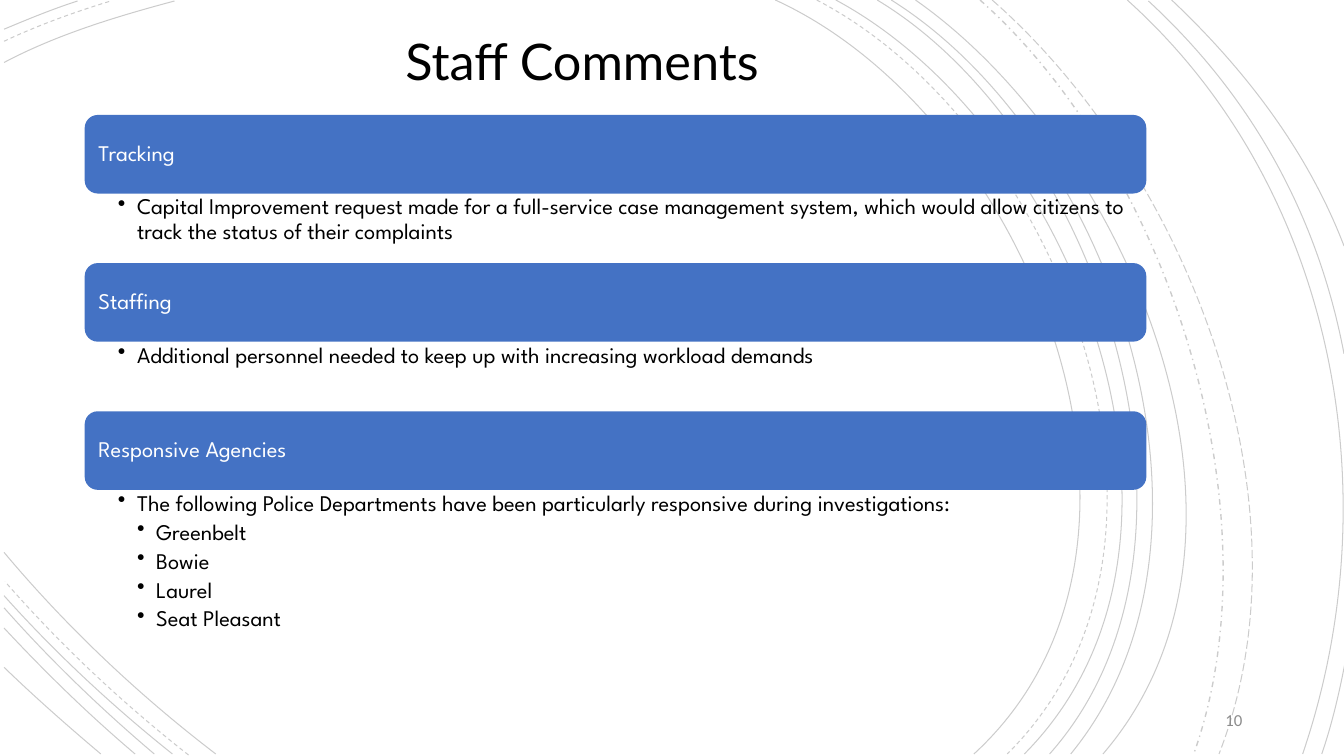
import dataclasses

import lxml.etree
import pptx
import pptx.dml.color
import pptx.enum.dml
import pptx.enum.shapes
import pptx.enum.text
import pptx.oxml.ns
import pptx.util

PX = 9144  # EMU per px, 100 px to the inch
RGB = pptx.dml.color.RGBColor.from_string
ANCHOR = pptx.enum.text.MSO_ANCHOR
ALIGN = pptx.enum.text.PP_ALIGN
DASH = pptx.enum.dml.MSO_LINE
qn = pptx.oxml.ns.qn


@dataclasses.dataclass(frozen=True)
class Theme:
    ink: str = "000000"
    paper: str = "FFFFFF"
    bar: str = "4472C4"
    muted: str = "8C8C8C"
    title_font: str = "Lato"
    body_font: str = "League Spartan"
    number_font: str = "Calibri"
    title_size: int = 36
    body_size: int = 16
    number_size: int = 12
    line_spacing: float = 0.9
    bullet_gap: float = 3.4
    arc_opacity: int = 20


THEME = Theme()

# Line style and width, then each arc: start, two control points, end
ARC_BANDS = [
    (DASH.SOLID, 0.75, [
        ((769, 0), (1020, 115), (1192, 540), (966, 748)),
        ((829, 0), (1065, 127), (1225, 537), (1016, 748)),
        ((870, 0), (1091, 133), (1225, 541), (1041, 748)),
        ((884, 0), (1104, 138), (1238, 533), (1062, 748)),
        ((908, 0), (1118, 147), (1282, 529), (1094, 748)),
        ((1118, 0), (1324, 185), (1380, 490), (1292, 748)),
        ((1139, 1), (1242, 96), (1307, 214), (1333, 351)),
        ((1334, 658), (1328, 689), (1321, 719), (1311, 748)),
        ((1162, 0), (1235, 69), (1297, 150), (1333, 244)),
        ((4, 62), (57, 34), (117, 16), (173, 1)),
        ((4, 29), (28, 19), (52, 9), (77, 1)),
        ((214, 748), (138, 690), (66, 622), (4, 548)),
        ((171, 748), (112, 701), (55, 648), (4, 591)),
        ((153, 748), (101, 704), (50, 655), (4, 603)),
        ((134, 748), (88, 709), (45, 667), (4, 623)),
        ((100, 748), (68, 721), (35, 692), (4, 662)),
    ]),
    (DASH.DASH, 0.75, [
        ((810, 0), (1050, 125), (1212, 537), (999, 748)),
        ((4, 41), (38, 25), (74, 12), (110, 1)),
        ((187, 749), (122, 698), (60, 640), (5, 577)),
    ]),
    (DASH.DASH_DOT, 1, [((972, 0), (1159, 166), (1269, 509), (1184, 748))]),
    (DASH.LONG_DASH, 0.75, [((984, 0), (1177, 169), (1306, 499), (1209, 748))]),
]

# Heading, height of the text below it, and its lines as (level, text)
COMMENTS = [
    ("Tracking", 69, [
        (1, "Capital Improvement request made for a full-service case management "
            "system, which would allow citizens to track the status of their complaints"),
    ]),
    ("Staffing", 69, [
        (1, "Additional personnel needed to keep up with increasing workload demands"),
    ]),
    ("Responsive Agencies", 151, [
        (1, "The following Police Departments have been particularly responsive "
            "during investigations:"),
        (2, "Greenbelt"),
        (2, "Bowie"),
        (2, "Laurel"),
        (2, "Seat Pleasant"),
    ]),
]


def emu(*lengths):
    return [n * PX for n in lengths]


def set_frame(tf, insets, anchor):
    tf.word_wrap = True
    tf.auto_size = pptx.enum.text.MSO_AUTO_SIZE.NONE
    tf.vertical_anchor = anchor
    tf.margin_left, tf.margin_top, tf.margin_right, tf.margin_bottom = emu(*insets)


def set_paragraph(p, text, font, size, color, align=ALIGN.LEFT):
    p.text = text
    p.alignment = align
    p.line_spacing = THEME.line_spacing
    for r in p.runs:
        r.font.name = font
        r.font.size = pptx.util.Pt(size)
        r.font.color.rgb = RGB(color)


def add_bullet(p, level, step=19):
    p.space_after = pptx.util.Pt(THEME.bullet_gap)
    pPr = p._p.get_or_add_pPr()
    pPr.set("marL", str(level * step * PX))
    pPr.set("indent", str(-step * PX))
    lxml.etree.SubElement(pPr, qn("a:buChar")).set("char", "•")


def add_arc(s, points, dash, width):
    """Draw one cubic curve as an open outline."""
    builder = s.shapes.build_freeform(*points[0], scale=PX)
    builder.add_line_segments(points[1:], close=False)
    sp = builder.convert_to_shape()
    segments = list(sp.element.iter(qn("a:lnTo")))
    curve = lxml.etree.SubElement(segments[0].getparent(), qn("a:cubicBezTo"))
    for segment in segments:
        curve.append(segment[0])
        segment.getparent().remove(segment)
    sp.shadow.inherit = False
    sp.fill.background()
    sp.line.color.rgb = RGB(THEME.ink)
    sp.line.width = pptx.util.Pt(width)
    sp.line.dash_style = dash
    color = next(sp.line._ln.iter(qn("a:srgbClr")))
    lxml.etree.SubElement(color, qn("a:alpha")).set("val", str(THEME.arc_opacity * 1000))


def add_backdrop(s):
    for dash, width, arcs in ARC_BANDS:
        for points in arcs:
            add_arc(s, points, dash, width)


def add_title(s, text, box):
    title = s.shapes.title
    title.element.getparent().append(title.element)  # in front of the arcs
    title.left, title.top, title.width, title.height = emu(*box)
    set_frame(title.text_frame, (10, 5, 10, 5), ANCHOR.TOP)
    set_paragraph(title.text_frame.paragraphs[0], text,
                  THEME.title_font, THEME.title_size, THEME.ink)


def add_comment(s, heading, lines, box, bar_height):
    x, y, w, h = box
    bar = s.shapes.add_shape(pptx.enum.shapes.MSO_SHAPE.ROUNDED_RECTANGLE,
                             *emu(x, y, w, bar_height))
    bar.shadow.inherit = False
    bar.fill.solid()
    bar.fill.fore_color.rgb = RGB(THEME.bar)
    bar.line.fill.background()
    set_frame(bar.text_frame, (10, 7, 10, 7), ANCHOR.MIDDLE)
    set_paragraph(bar.text_frame.paragraphs[0], heading,
                  THEME.body_font, THEME.body_size, THEME.paper)

    tf = s.shapes.add_textbox(*emu(x, y + bar_height, w, h - bar_height)).text_frame
    set_frame(tf, (33, 2, 12, 2), ANCHOR.TOP)
    for i, (level, text) in enumerate(lines):
        p = tf.add_paragraph() if i else tf.paragraphs[0]
        set_paragraph(p, text, THEME.body_font, THEME.body_size, THEME.ink)
        add_bullet(p, level)


def add_comments(s, comments, box, bar_height=78):
    x, y, w = box
    for heading, text_height, lines in comments:
        h = bar_height + text_height
        add_comment(s, heading, lines, (x, y, w, h), bar_height)
        y += h


def add_page_number(s, number, box):
    tf = s.shapes.add_textbox(*emu(*box)).text_frame
    set_frame(tf, (10, 5, 10, 5), ANCHOR.MIDDLE)
    set_paragraph(tf.paragraphs[0], number, THEME.number_font,
                  THEME.number_size, THEME.muted, ALIGN.RIGHT)


def add_comments_slide(prs):
    s = prs.slides.add_slide(prs.slide_layouts.get_by_name("Title Only"))
    add_backdrop(s)
    add_title(s, "Staff Comments", (392, 32, 435, 89))
    add_comments(s, COMMENTS, (84, 114, 1053))
    add_page_number(s, "10", (942, 695, 300, 40))


def main():
    prs = pptx.Presentation()
    prs.slide_width, prs.slide_height = emu(1333, 750)
    add_comments_slide(prs)
    prs.save("out.pptx")


if __name__ == "__main__":
    main()
